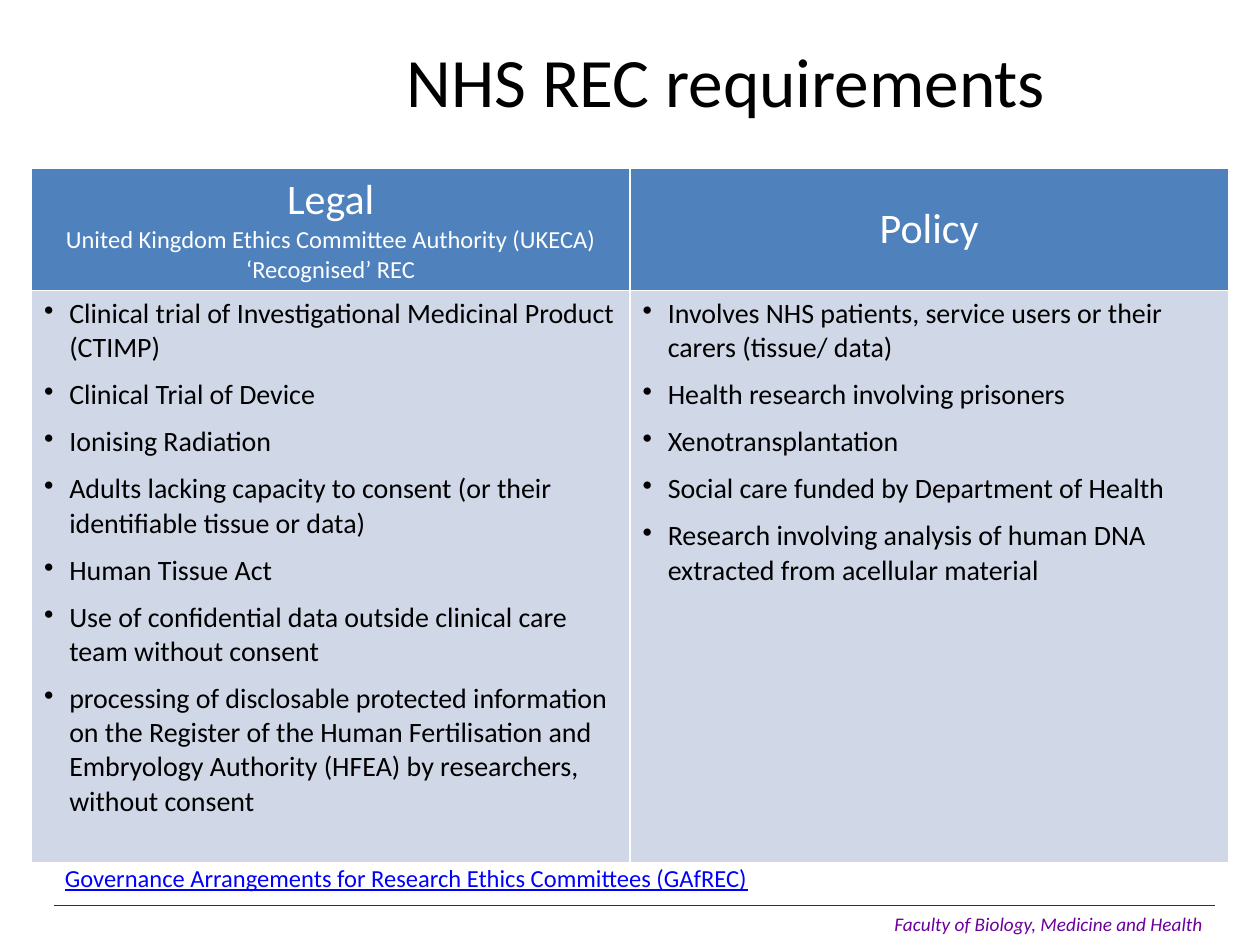
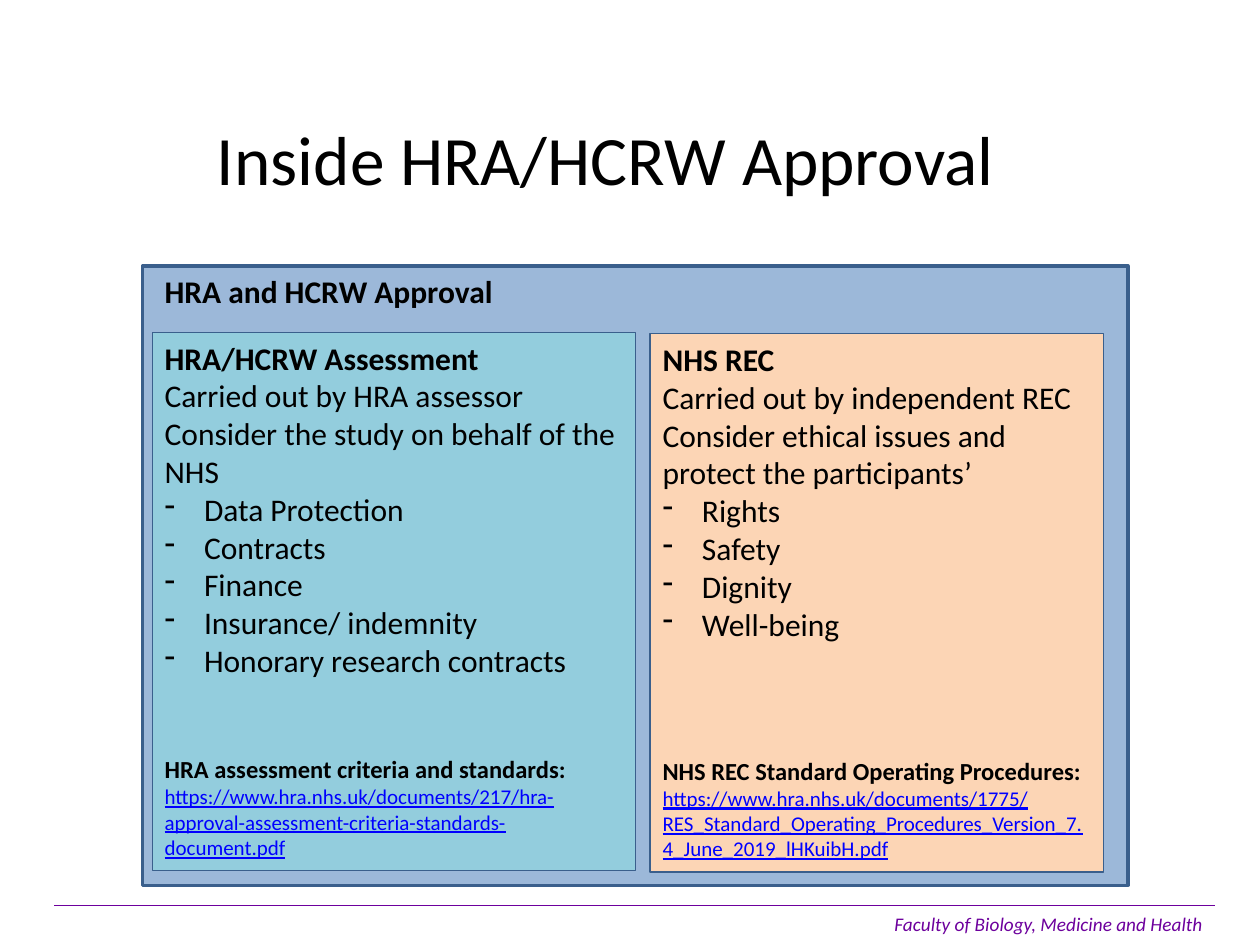
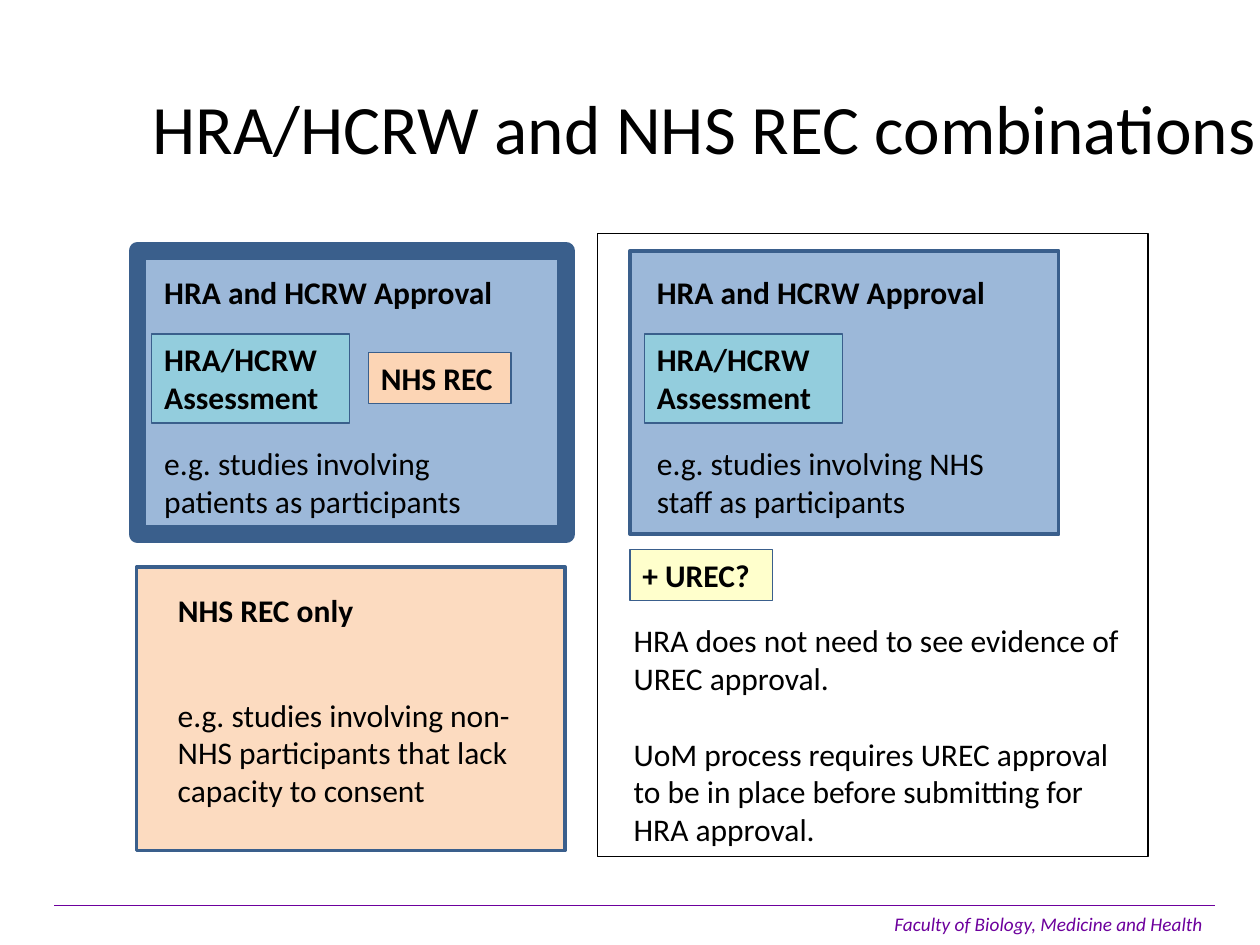
from dataclasses import dataclass

from lxml import etree
from pptx import Presentation
from pptx.dml.color import RGBColor
from pptx.enum.shapes import MSO_CONNECTOR, MSO_SHAPE
from pptx.enum.text import MSO_ANCHOR, PP_ALIGN
from pptx.oxml.ns import qn
from pptx.util import Pt

RECTANGLE = MSO_SHAPE.RECTANGLE
STRAIGHT = MSO_CONNECTOR.STRAIGHT
MIDDLE, TOP = MSO_ANCHOR.MIDDLE, MSO_ANCHOR.TOP
LEFT, CENTER = PP_ALIGN.LEFT, PP_ALIGN.CENTER

FONT = "Calibri"
COLORS = {
    "text": "000000",
    "white": "FFFFFF",
    "link": "0000FF",
    "footer": "6D009D",
    "blue": "4F81BD",
    "edge": "3A5F8C",
    "pale": "D0D8E8",
    "teal": "93CDDD",
    "peach": "FCD5B5",
    "orange": "FAC090",
    "yellow": "FFFFCC",
}
BLANK_LINE = 21.6

LEGAL = [
    "Clinical trial of Investigational Medicinal Product (CTIMP)",
    "Clinical Trial of Device",
    "Ionising Radiation",
    "Adults lacking capacity to consent (or their identifiable tissue or data)",
    "Human Tissue Act",
    "Use of confidential data outside clinical care team without consent",
    "processing of disclosable protected information on the Register of the Human "
    "Fertilisation and Embryology Authority (HFEA) by researchers, without consent",
]
POLICY = [
    "Involves NHS patients, service users or their carers (tissue/ data)",
    "Health research involving prisoners",
    "Xenotransplantation",
    "Social care funded by Department of Health",
    "Research involving analysis of human DNA extracted from acellular material",
]


@dataclass
class Line:
    """One paragraph and its look."""
    text: str
    size: float = 18
    color: str = "text"
    bold: bool = False
    italic: bool = False
    underline: bool = False
    align: int = LEFT
    before: float = 0
    bullet: str = ""
    indent: float = 0


def rgb(name):
    return RGBColor.from_string(COLORS[name])


def write(frame, lines):
    frame.word_wrap = True
    for index, line in enumerate(lines):
        para = frame.paragraphs[0] if index == 0 else frame.add_paragraph()
        para.text = line.text
        para.alignment = line.align
        if line.before:
            para.space_before = Pt(line.before)
        if line.bullet:
            properties = para._p.get_or_add_pPr()
            properties.set("marL", str(Pt(line.indent)))
            properties.set("indent", str(-Pt(line.indent)))
            etree.SubElement(properties, qn("a:buChar")).set("char", line.bullet)
        for span in para.runs:
            font = span.font
            font.name, font.size = FONT, Pt(line.size)
            font.bold, font.italic, font.underline = line.bold, line.italic, line.underline
            font.color.rgb = rgb(line.color)


def add_text(page, box, lines, anchor=TOP):
    shape = page.shapes.add_textbox(*map(Pt, box))
    shape.text_frame.vertical_anchor = anchor
    write(shape.text_frame, lines)


def add_panel(page, box, fill=None, lines=(), edge="edge", width=0.75, opacity=None):
    shape = page.shapes.add_shape(RECTANGLE, *map(Pt, box))
    shape.shadow.inherit = False
    shape.line.color.rgb = rgb(edge)
    shape.line.width = Pt(width)
    if fill:
        shape.fill.solid()
        shape.fill.fore_color.rgb = rgb(fill)
    else:
        shape.fill.background()
    if opacity:
        color = shape.fill._xPr.find(qn("a:solidFill"))[0]
        etree.SubElement(color, qn("a:alpha")).set("val", str(opacity * 1000))
    shape.text_frame.vertical_anchor = TOP
    write(shape.text_frame, lines)


def add_page(deck, title, title_box):
    """Add a page with the shared footer and title."""
    page = deck.slides.add_slide(deck.slide_layouts[6])
    rule = page.shapes.add_connector(STRAIGHT, Pt(31), Pt(517.5), Pt(694.5), Pt(517.5))
    rule.line.color.rgb = rgb("footer")
    rule.line.width = Pt(0.75)
    etree.SubElement(rule._element.spPr, qn("a:effectLst"))
    add_text(page, (504, 517.5, 196, 21),
             [Line("Faculty of Biology, Medicine and Health", 11, "footer", italic=True)])
    add_text(page, title_box, [Line(title, 39.6, align=CENTER)], MIDDLE)
    return page


def style_cell(cell, fill, lines, anchor):
    properties = cell._tc.get_or_add_tcPr()
    for side in ("lnL", "lnR", "lnT", "lnB"):
        border = etree.SubElement(properties, qn(f"a:{side}"), w=str(Pt(1)))
        paint = etree.SubElement(border, qn("a:solidFill"))
        etree.SubElement(paint, qn("a:srgbClr")).set("val", COLORS["white"])
    cell.fill.solid()
    cell.fill.fore_color.rgb = rgb(fill)
    cell.vertical_anchor = anchor
    write(cell.text_frame, lines)


def add_requirements_table(page, box):
    header_height = 70
    table = page.shapes.add_table(2, 2, *map(Pt, box)).table
    table.first_row = table.horz_banding = False
    table.rows[0].height = Pt(header_height)
    table.rows[1].height = Pt(box[3] - header_height)
    headers = [
        [("Legal", 24),
         ("United Kingdom Ethics Committee Authority (UKECA) ‘Recognised’ REC", 14)],
        [("Policy", 24)],
    ]
    for column, (header, items) in enumerate(zip(headers, (LEGAL, POLICY))):
        table.columns[column].width = Pt(box[2] / 2)
        style_cell(table.cell(0, column), "blue",
                   [Line(text, size, "white", align=CENTER) for text, size in header], MIDDLE)
        style_cell(table.cell(1, column), "pale",
                   [Line(text, 16, before=7.3 if index else 0, bullet="•", indent=14.4)
                    for index, text in enumerate(items)], TOP)


def add_review_panel(page, box, fill, heading, duties, topics, blank_lines, source, link):
    lines = [Line(heading, bold=True)]
    lines += [Line(duty) for duty in duties]
    lines += [Line(topic, bullet="-", indent=22.5) for topic in topics]
    lines.append(Line(source, 14, bold=True, before=blank_lines * BLANK_LINE))
    lines.append(Line(link, 12, "link", underline=True))
    add_panel(page, box, fill, lines)


def add_approval_case(page, box, border, example, with_rec):
    """Draw one approval route with its reviews and an example."""
    left, top, width, _ = box
    add_panel(page, box, "blue", width=border, opacity=56)
    if with_rec:
        add_panel(page, (left + 132, top + 58.3, 81.5, 29), "peach",
                  [Line("NHS REC", bold=True)])
    add_panel(page, (left + 8.3, top + 47.5, 113, 51), "teal",
              [Line("HRA/HCRW Assessment", bold=True)])
    add_text(page, (left + 8.3, top + 9, 208, 29), [Line("HRA and HCRW Approval", bold=True)])
    add_text(page, (left + 8.3, top + 107, width - 18, 51), [Line(example)])


def add_rec_only_case(page, box):
    left, top, width, _ = box
    add_panel(page, box, "orange", width=2, opacity=56)
    add_text(page, (left + 16.5, top + 10, 123, 29), [Line("NHS REC only", bold=True)])
    add_text(page, (left + 16.5, top + 70, width - 18, 73),
             [Line("e.g. studies involving non-NHS participants that lack capacity to consent")])


def add_urec_notes(page, box):
    left, top, width, height = box
    add_panel(page, (left + 5, top, 81.5, 29), "yellow", [Line("+ UREC?", bold=True)])
    add_text(page, (left, top + 37.5, width, height - 37.5), [
        Line("HRA does not need to see evidence of UREC approval."),
        Line("UoM process requires UREC approval to be in place before submitting for "
             "HRA approval.", before=BLANK_LINE),
    ])


def build_requirements(deck):
    page = add_page(deck, "NHS REC requirements", (175, 24, 480, 43))
    add_requirements_table(page, (18, 96, 684, 397))
    add_text(page, (30, 489.6, 660, 24.5),
             [Line("Governance Arrangements for Research Ethics Committees (GAfREC)",
                   14, "link", underline=True)])


def build_inside_approval(deck):
    page = add_page(deck, "Inside HRA/HCRW Approval", (22, 68.5, 648, 43))
    add_panel(page, (81.5, 152, 563, 354), "blue", width=2, opacity=56)
    add_review_panel(
        page, (371.5, 190.8, 259, 307.5), "peach", "NHS REC",
        ["Carried out by independent REC",
         "Consider ethical issues and protect the participants’"],
        ["Rights", "Safety", "Dignity", "Well-being"], 3,
        "NHS REC Standard Operating Procedures:",
        "https://www.hra.nhs.uk/documents/1775/"
        "RES_Standard_Operating_Procedures_Version_7.4_June_2019_lHKuibH.pdf")
    add_review_panel(
        page, (87, 190, 276, 307.5), "teal", "HRA/HCRW Assessment",
        ["Carried out by HRA assessor", "Consider the study on behalf of the NHS"],
        ["Data Protection", "Contracts", "Finance", "Insurance/ indemnity",
         "Honorary research contracts"], 2,
        "HRA assessment criteria and standards:",
        "https://www.hra.nhs.uk/documents/217/"
        "hra-approval-assessment-criteria-standards-document.pdf")
    add_text(page, (87, 152, 204.5, 29), [Line("HRA and HCRW Approval", bold=True)])


def build_combinations(deck):
    page = add_page(deck, "HRA/HCRW and NHS REC combinations", (78.5, 51, 648, 43))
    add_panel(page, (341.5, 133.5, 314.5, 356), edge="text")
    add_approval_case(page, (78.5, 143.3, 245, 162), 10,
                      "e.g. studies involving patients as participants", True)
    add_approval_case(page, (360, 143.3, 245, 162), 2,
                      "e.g. studies involving NHS staff as participants", False)
    add_rec_only_case(page, (78, 324, 245, 162))
    add_urec_notes(page, (355, 314, 294, 175.5))


def main():
    deck = Presentation()
    deck.slide_width, deck.slide_height = Pt(720), Pt(540)
    build_requirements(deck)
    build_inside_approval(deck)
    build_combinations(deck)
    deck.save("out.pptx")


if __name__ == "__main__":
    main()
